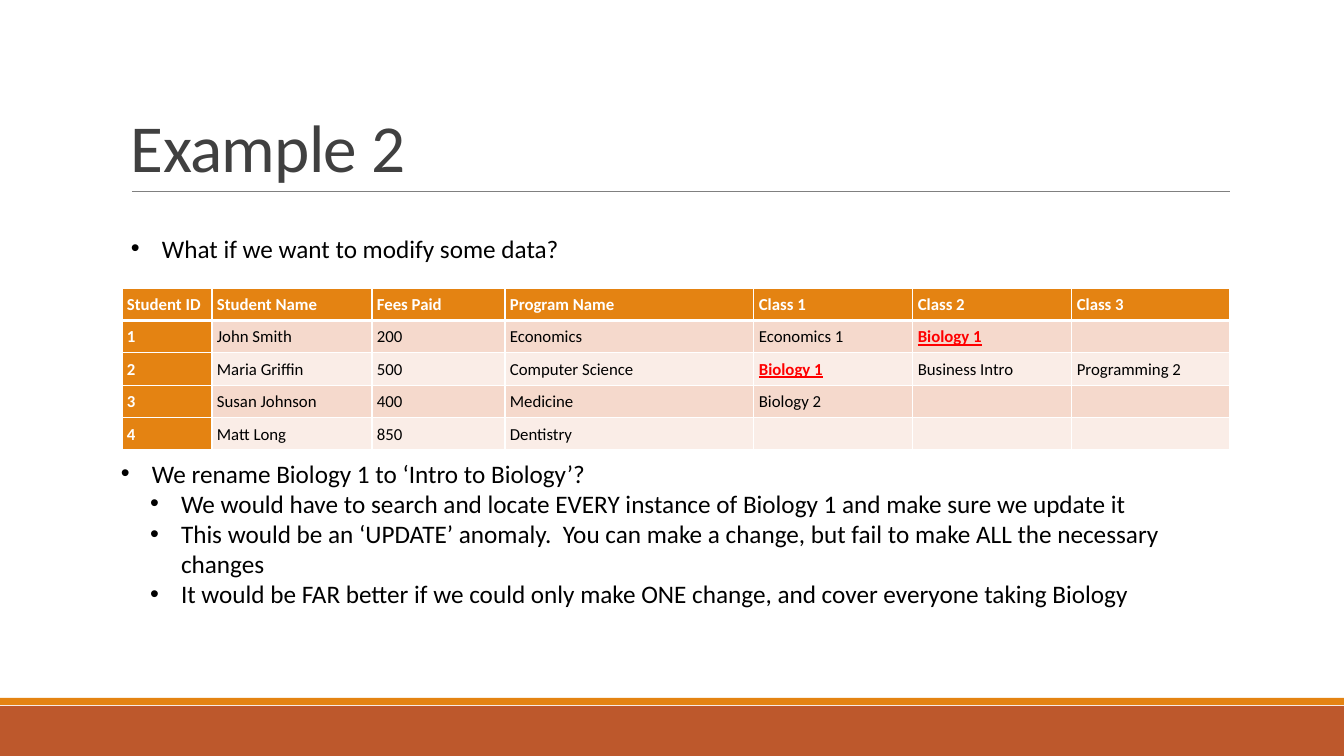
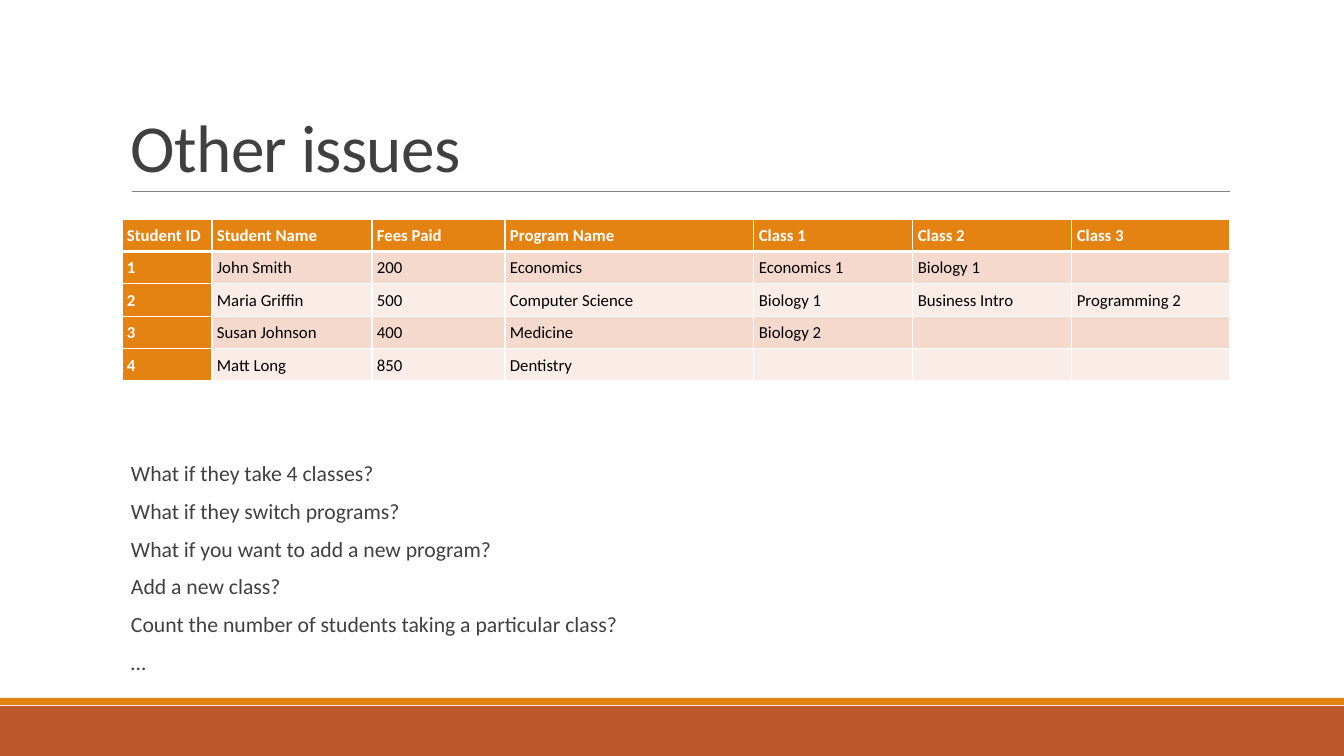
from lxml import etree
from pptx import Presentation
from pptx.dml.color import RGBColor
from pptx.enum.shapes import MSO_CONNECTOR, MSO_SHAPE
from pptx.enum.text import MSO_ANCHOR
from pptx.oxml.ns import qn
from pptx.util import Emu, Pt

RECTANGLE = MSO_SHAPE.RECTANGLE
STRAIGHT = MSO_CONNECTOR.STRAIGHT
TOP, MIDDLE, BOTTOM = MSO_ANCHOR.TOP, MSO_ANCHOR.MIDDLE, MSO_ANCHOR.BOTTOM

PX_PER_INCH = 100.8
SLIDE_WIDTH, SLIDE_HEIGHT = 1344, 756
FONT = "Calibri"
ORANGE, RUST, GRAY, DARK = "E48312", "BD582C", "808080", "404040"
WHITE, BLACK, RED = "FFFFFF", "000000", "FF0000"
ROW_FILLS = ("F5D9CC", "FAEDE7")

BANDS = [(706, 50, RUST), (698, 7, ORANGE)]  # top, height, fill
TITLE_BOX = (121, 31, 1109, 160)
RULE_LEFT, RULE_RIGHT, RULE_TOP = 132, 1230, 191

TABLE_LEFT, TABLE_HEIGHT, CELL_MARGIN = 122, 162, 5
COLUMN_WIDTHS = (90, 160, 133, 249, 159, 159, 158)
STUDENTS = [
    ("Student ID", "Student Name", "Fees Paid", "Program Name", "Class 1", "Class 2", "Class 3"),
    ("1", "John Smith", "200", "Economics", "Economics 1", "Biology 1", ""),
    ("2", "Maria Griffin", "500", "Computer Science", "Biology 1", "Business Intro", "Programming 2"),
    ("3", "Susan Johnson", "400", "Medicine", "Biology 2", "", ""),
    ("4", "Matt Long", "850", "Dentistry", "", "", ""),
]

BULLET = dict(size=18, color=BLACK, bullet="•", indent=31)
QUESTION = dict(size=15.5, color=DARK, indent=10, left_margin=0,
                line_spacing=0.7, space_before=12, space_after=2)
SLIDES = [
    dict(
        title="Example 2",
        table_top=288,
        marked="Biology 1",
        texts=[
            ((121, 228, 1099, 40), BULLET, ["What if we want to modify some data?"]),
            ((111, 453, 1099, 40), BULLET, ["We rename Biology 1 to ‘Intro to Biology’?"]),
            ((140, 483, 1099, 163), BULLET, [
                "We would have to search and locate EVERY instance of Biology 1 and make sure we update it",
                "This would be an ‘UPDATE’ anomaly.  You can make a change, but fail to make ALL the necessary changes",
                "It would be FAR better if we could only make ONE change, and cover everyone taking Biology",
            ]),
        ],
    ),
    dict(
        title="Other issues",
        table_top=219,
        marked=None,
        texts=[
            ((121, 462, 1109, 231), QUESTION, [
                "What if they take 4 classes?",
                "What if they switch programs?",
                "What if you want to add a new program?",
                "Add a new class?",
                "Count the number of students taking a particular class?",
                "…",
            ]),
        ],
    ),
]


def px(length):
    return Emu(round(length * 914400 / PX_PER_INCH))


def rgb(color):
    return RGBColor.from_string(color)


def format_font(font, size, color, bold=False, underline=False):
    font.name, font.size = FONT, Pt(size)
    font.bold, font.underline = bold, underline
    font.color.rgb = rgb(color)


def add_text(slide, box, lines, size, color, bullet=None, indent=0, left_margin=10,
             anchor=TOP, line_spacing=1.0, space_before=0, space_after=0):
    text_frame = slide.shapes.add_textbox(*map(px, box)).text_frame
    text_frame.word_wrap = True
    text_frame.vertical_anchor = anchor
    text_frame.margin_left = px(left_margin)
    text_frame.text = "\n".join(lines)
    for paragraph in text_frame.paragraphs:
        paragraph.line_spacing = line_spacing
        paragraph.space_before, paragraph.space_after = Pt(space_before), Pt(space_after)
        properties = paragraph._p.get_or_add_pPr()
        properties.set("marL", str(px(indent)))
        if bullet:
            properties.set("indent", str(px(-indent)))
            etree.SubElement(properties, qn("a:buFont"), typeface="Arial")
            etree.SubElement(properties, qn("a:buChar"), char=bullet)
        for run in paragraph.runs:
            format_font(run.font, size, color)
    return text_frame


def add_frame(slide, title):
    """Draw the footer bands, the title and the rule below it."""
    for top, height, color in BANDS:
        band = slide.shapes.add_shape(RECTANGLE, 0, px(top), px(SLIDE_WIDTH), px(height))
        band.shadow.inherit = False
        band.fill.solid()
        band.fill.fore_color.rgb = rgb(color)
        band.line.fill.background()
    rule = slide.shapes.add_connector(
        STRAIGHT, px(RULE_LEFT), px(RULE_TOP), px(RULE_RIGHT), px(RULE_TOP))
    rule.line.color.rgb = rgb(GRAY)
    rule.line.width = Pt(0.5)
    etree.SubElement(rule._element.spPr, qn("a:effectLst"))
    text_frame = add_text(slide, TITLE_BOX, [title], 48, DARK, anchor=BOTTOM, line_spacing=0.85)
    text_frame.paragraphs[0].runs[0].font._element.set("spc", "-50")


def set_borders(cell, top=1, bottom=1):
    properties = cell._tc.get_or_add_tcPr()
    for side, width in (("L", 1), ("R", 1), ("T", top), ("B", bottom)):
        line = etree.SubElement(properties, qn(f"a:ln{side}"), w=str(Pt(width)))
        fill = etree.SubElement(line, qn("a:solidFill"))
        etree.SubElement(fill, qn("a:srgbClr"), val=WHITE)


def format_cell(cell, text, row, column, marked):
    heading = row == 0 or column == 0
    emphasis = bool(text) and text == marked
    set_borders(cell, top=3 if row == 1 else 1, bottom=3 if row == 0 else 1)
    cell.fill.solid()
    cell.fill.fore_color.rgb = rgb(ORANGE if heading else ROW_FILLS[(row - 1) % 2])
    cell.vertical_anchor = MIDDLE
    cell.margin_left = cell.margin_right = px(CELL_MARGIN)
    cell.margin_top = cell.margin_bottom = px(CELL_MARGIN)
    cell.text_frame.text = text
    paragraph = cell.text_frame.paragraphs[0]
    paragraph.line_spacing = 1.07
    color = WHITE if heading else RED if emphasis else BLACK
    for run in paragraph.runs:
        format_font(run.font, 12, color, heading or emphasis, emphasis)
    if not text:
        etree.SubElement(paragraph._p, qn("a:endParaRPr"), sz="1200")


def add_student_table(slide, top, marked):
    table = slide.shapes.add_table(
        len(STUDENTS), len(COLUMN_WIDTHS), px(TABLE_LEFT), px(top),
        px(sum(COLUMN_WIDTHS)), px(TABLE_HEIGHT)).table
    table.first_col = True
    table.horz_banding = False
    for column, width in zip(table.columns, COLUMN_WIDTHS):
        column.width = px(width)
    for row_index, values in enumerate(STUDENTS):
        table.rows[row_index].height = px(TABLE_HEIGHT / len(STUDENTS))
        for column_index, value in enumerate(values):
            format_cell(table.cell(row_index, column_index), value,
                        row_index, column_index, marked)


def main():
    presentation = Presentation()
    presentation.slide_width, presentation.slide_height = px(SLIDE_WIDTH), px(SLIDE_HEIGHT)
    blank = presentation.slide_layouts[6]
    for content in SLIDES:
        slide = presentation.slides.add_slide(blank)
        add_frame(slide, content["title"])
        add_student_table(slide, content["table_top"], content["marked"])
        for box, style, lines in content["texts"]:
            add_text(slide, box, lines, **style)
    presentation.save("out.pptx")


if __name__ == "__main__":
    main()
